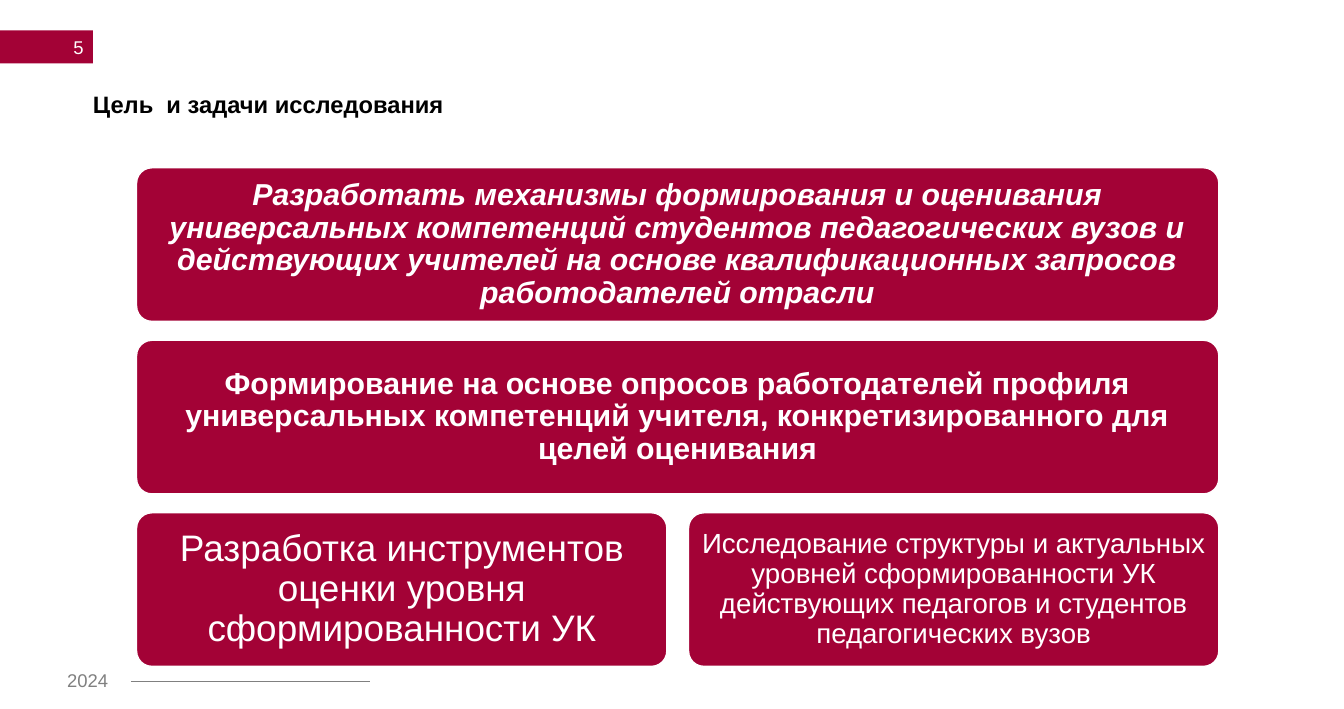
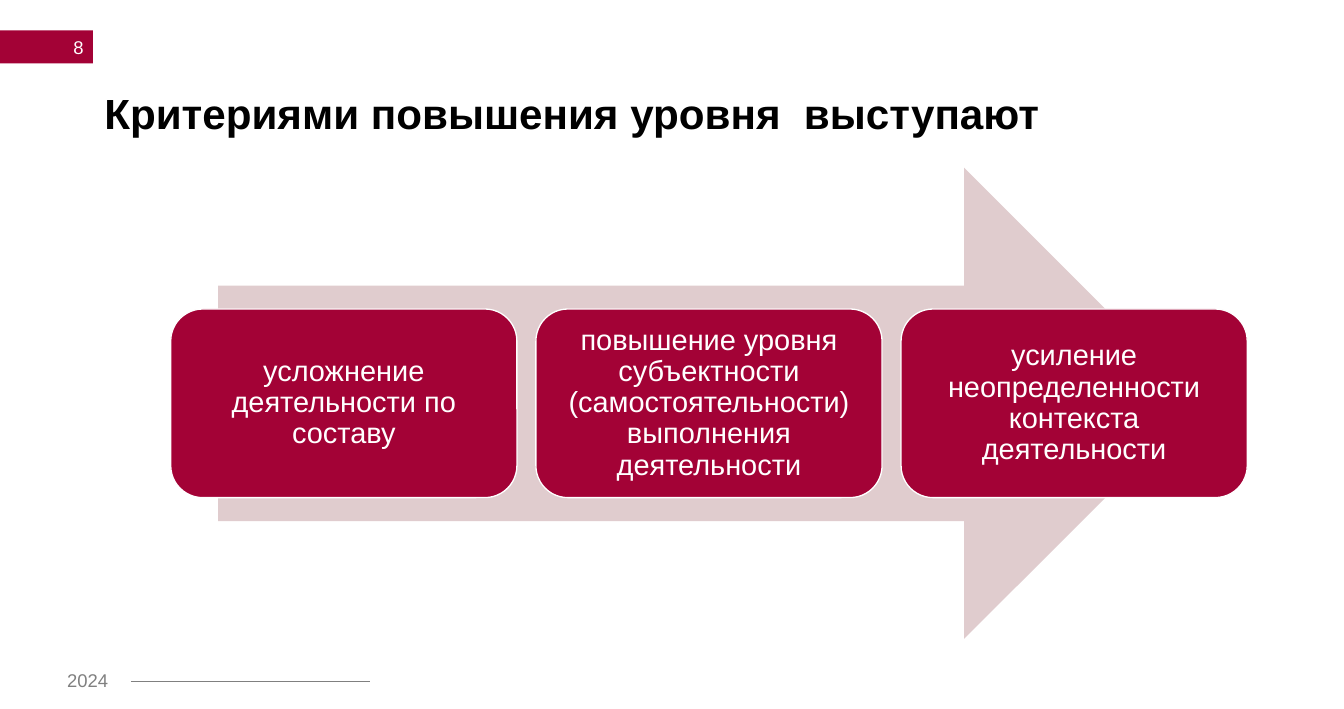
"""Build two slides on the goals and criteria of the study."""
from dataclasses import dataclass

from lxml import etree
from pptx import Presentation
from pptx import util as u
from pptx.dml import color
from pptx.enum import shapes, text
from pptx.oxml import ns

WIDE, HIGH = 14.17, 7.48
FONT = "Arial"
HUES = {"wine": "A30236", "rose": "E0CCCE", "gray": "808080",
        "white": "FFFFFF", "black": "000000"}
KIND = shapes.MSO_SHAPE
ALIGN = text.PP_ALIGN
MID = text.MSO_ANCHOR.MIDDLE
TOP = text.MSO_ANCHOR.TOP


@dataclass(frozen=True)
class Area:
    """A rectangle in inches."""
    x: float
    y: float
    w: float
    h: float

    def emu(self) -> list:
        """Return the four lengths as python-pptx units."""
        return [u.Inches(v) for v in (self.x, self.y, self.w, self.h)]


@dataclass(frozen=True)
class Grid:
    """Equal cells with gaps, starting at a corner."""
    x: float
    y: float
    w: float
    h: float
    gap_x: float
    gap_y: float = 0

    def cell(self, col: int, row: int, span: int) -> Area:
        """Return the area of a cell that spans some columns."""
        return Area(self.x + col * (self.w + self.gap_x),
                    self.y + row * (self.h + self.gap_y),
                    span * (self.w + self.gap_x) - self.gap_x, self.h)


@dataclass(frozen=True)
class Card:
    """A rounded box with its place on the grid and its text style."""
    words: str
    size: float
    col: int = 0
    row: int = 0
    span: int = 1
    bold: bool = False
    slant: bool = False
    pad: float = 0.09


@dataclass(frozen=True)
class Page:
    """One slide: number, title, grid and cards."""
    num: str
    title: str
    size: float
    grid: Grid
    cards: tuple
    round: float
    dent: float = 0
    arrow: bool = False


PAGES = (
    Page("5", "Цель  и задачи исследования", 18,
         Grid(1.44, 1.77, 5.59, 1.62, 0.23, 0.2), (
             Card("Разработать механизмы формирования и оценивания "
                  "универсальных компетенций студентов педагогических вузов "
                  "и действующих учителей на основе квалификационных "
                  "запросов работодателей отрасли",
                  23, span=2, bold=True, slant=True, pad=0.1),
             Card("Формирование на основе опросов работодателей профиля "
                  "универсальных компетенций учителя, конкретизированного "
                  "для целей оценивания",
                  23, row=1, span=2, bold=True, pad=0.1),
             Card("Разработка инструментов оценки уровня "
                  "сформированности УК", 28, row=2, pad=0.12),
             Card("Исследование структуры и актуальных уровней "
                  "сформированности УК действующих педагогов и студентов "
                  "педагогических вузов", 21, col=1, row=2),
         ), round=0.1),
    Page("8", "Критериями повышения уровня  выступают", 32,
         Grid(1.8, 3.26, 3.65, 1.99, 0.2), (
             Card("усложнение деятельности по составу", 22),
             Card("повышение уровня субъектности (самостоятельности) "
                  "выполнения деятельности", 22, col=1),
             Card("усиление неопределенности контекста деятельности",
                  22, col=2),
         ), round=0.17, dent=0.12, arrow=True),
)


def hue(name: str) -> color.RGBColor:
    """Look up a colour by name."""
    return color.RGBColor.from_string(HUES[name])


def write(shape, words: str, size: float, ink: str, align, anchor,
          pad: tuple = (0.1, 0.05, 0.1, 0.05), bold: bool = False,
          slant: bool = False, lead: float = 1.0) -> None:
    """Fill a shape with one styled paragraph."""
    frame = shape.text_frame
    frame.word_wrap = True
    frame.auto_size = text.MSO_AUTO_SIZE.NONE
    frame.vertical_anchor = anchor
    (frame.margin_left, frame.margin_top, frame.margin_right,
     frame.margin_bottom) = [u.Inches(v) for v in pad]
    para = frame.paragraphs[0]
    para.text = words
    para.alignment = align
    para.line_spacing = lead
    font = para.font
    font.name, font.size = FONT, u.Pt(size)
    font.bold, font.italic = bold, slant
    font.color.rgb = hue(ink)


def block(slide, kind, area: Area, fill: str, edge: str = ""):
    """Add a flat preset shape."""
    shape = slide.shapes.add_shape(kind, *area.emu())
    shape.shadow.inherit = False
    shape.fill.solid()
    shape.fill.fore_color.rgb = hue(fill)
    if edge:
        shape.line.color.rgb = hue(edge)
        shape.line.width = u.Pt(1)
    else:
        shape.line.fill.background()
    return shape


def frame(slide, page: Page) -> None:
    """Draw the number band, the footer and the title."""
    band = block(slide, KIND.RECTANGLE, Area(0, 0.32, 0.98, 0.35), "wine")
    write(band, page.num, 14, "white", ALIGN.RIGHT, MID)
    year = slide.shapes.add_textbox(*Area(0.61, 7.01, 0.67, 0.34).emu())
    write(year, "2024", 14, "gray", ALIGN.LEFT, TOP)
    rule = slide.shapes.add_connector(
        shapes.MSO_CONNECTOR.STRAIGHT,
        *[u.Inches(v) for v in (1.38, 7.19, 3.9, 7.19)])
    rule.line.color.rgb = hue("gray")
    rule.line.width = u.Pt(1.5)
    etree.SubElement(rule.element.spPr, ns.qn("a:effectLst"))
    title = slide.shapes.title
    title.left, title.top, title.width, title.height = Area(
        0.98, 0.98, 10.47, 0.78).emu()
    write(title, page.title, page.size, "black", ALIGN.LEFT, TOP,
          (page.dent, 0, 0, 0), bold=True, lead=0.9)


def draw(slide, page: Page) -> None:
    """Draw a whole page."""
    frame(slide, page)
    if page.arrow:
        block(slide, KIND.RIGHT_ARROW, Area(2.3, 1.77, 10.35, 4.97), "rose")
    for card in page.cards:
        area = page.grid.cell(card.col, card.row, card.span)
        box = block(slide, KIND.ROUNDED_RECTANGLE, area, "wine", "white")
        box.adjustments[0] = page.round
        write(box, card.words, card.size, "white", ALIGN.CENTER, MID,
              (card.pad,) * 4, card.bold, card.slant, 0.9)


def main() -> None:
    """Build and save the deck."""
    deck = Presentation()
    deck.slide_width, deck.slide_height = u.Inches(WIDE), u.Inches(HIGH)
    for page in PAGES:
        draw(deck.slides.add_slide(deck.slide_layouts[5]), page)
    deck.save("out.pptx")


if __name__ == "__main__":
    main()
